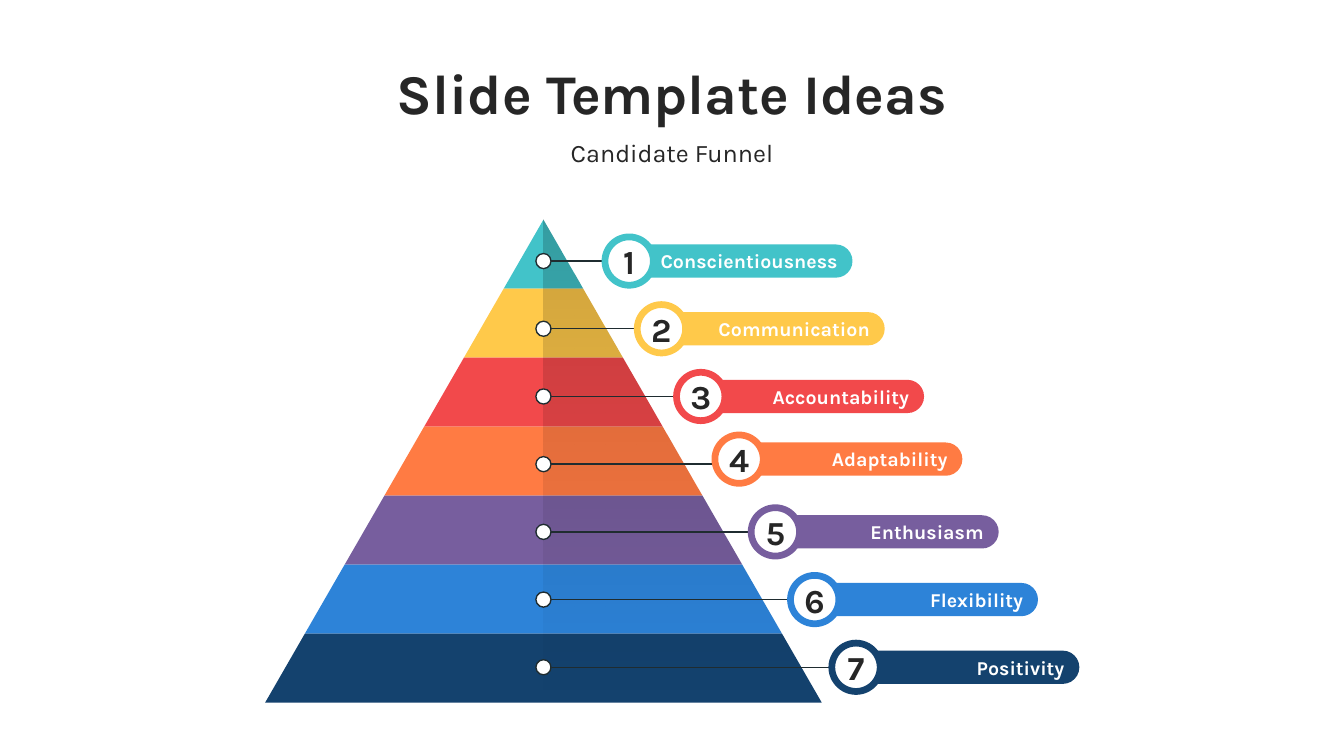
from dataclasses import dataclass

from lxml import etree
from pptx import Presentation
from pptx import util as u
from pptx.dml.color import RGBColor
from pptx.enum import shapes, text
from pptx.oxml import ns

TITLE = "Slide Template Ideas"
SUBTITLE = "Candidate Funnel"
# label, colour, centre of the number badge across the slide
LEVELS = [
    ("Conscientiousness", "42C3C9", 6.24),
    ("Communication", "FFC94A", 6.56),
    ("Accountability", "F2494B", 6.95),
    ("Adaptability", "FF7B43", 7.33),
    ("Enthusiasm", "775E9E", 7.69),
    ("Flexibility", "2D83D8", 8.08),
    ("Positivity", "14426E", 8.49),
]
BADGE_SHIFT = {"Adaptability": -0.05}


@dataclass(frozen=True)
class Theme:
    font: str = "Karla"
    ink: str = "262626"
    line: str = "1F2C30"
    white: str = "FFFFFF"
    shade: str = "000000"
    title_size: float = 40
    subtitle_size: float = 18
    number_size: float = 24
    label_size: float = 14
    thin: float = 0.97
    ring: float = 4.83


theme = Theme()
WIDTH, HEIGHT = 13.33, 7.5
AXIS, APEX, BASE, HALF_BASE = 5.39, 2.18, 6.97, 2.76
FIRST_ROW, LAST_ROW = 2.59, 6.62
BAND = (BASE - APEX) / len(LEVELS)
ROW = (LAST_ROW - FIRST_ROW) / (len(LEVELS) - 1)
DOT, BADGE = 0.15, 0.48
PILL_WIDTH, PILL_HEIGHT = 2.38, 0.33


def color(value):
    return RGBColor.from_string(value)


def write(shape, words, size, ink, align, bold=True, anchor=text.MSO_ANCHOR.MIDDLE):
    frame = shape.text_frame
    frame.text = words
    frame.word_wrap = True
    frame.auto_size = text.MSO_AUTO_SIZE.NONE
    frame.vertical_anchor = anchor
    paragraph = frame.paragraphs[0]
    paragraph.alignment = align
    paragraph.space_before = u.Pt(0)
    font = paragraph.runs[0].font
    font.name, font.size, font.bold = theme.font, u.Pt(size), bold
    font.color.rgb = color(ink)


def set_margins(frame, right=0):
    frame.margin_left = frame.margin_top = frame.margin_bottom = 0
    frame.margin_right = u.Inches(right)


def place(shape, left, top, width, height):
    shape.left, shape.top = u.Inches(left), u.Inches(top)
    shape.width, shape.height = u.Inches(width), u.Inches(height)


def add_centred(slide, kind, x, y, width, height, fill, line=None, weight=0):
    """Add a preset shape around the point x, y."""
    shape = slide.shapes.add_shape(
        kind, *map(u.Inches, (x - width / 2, y - height / 2, width, height)))
    shape.shadow.inherit = False
    shape.fill.solid()
    shape.fill.fore_color.rgb = color(fill)
    if line:
        shape.line.color.rgb = color(line)
        shape.line.width = u.Pt(weight)
    else:
        shape.line.fill.background()
    return shape


def add_polygon(slide, points):
    start, *others = [(u.Inches(x), u.Inches(y)) for x, y in points]
    builder = slide.shapes.build_freeform(*start, scale=1.0)
    builder.add_line_segments(others, close=True)
    shape = builder.convert_to_shape()
    shape.shadow.inherit = False
    shape.line.fill.background()
    return shape


def add_band(slide, index, fill):
    top, bottom = APEX + index * BAND, APEX + (index + 1) * BAND
    upper, lower = (HALF_BASE * step / len(LEVELS) for step in (index, index + 1))
    band = add_polygon(slide, [(AXIS - upper, top), (AXIS + upper, top),
                               (AXIS + lower, bottom), (AXIS - lower, bottom)])
    band.fill.solid()
    band.fill.fore_color.rgb = color(fill)


def add_shade(slide):
    """Darken the right half of the pyramid, fading out towards the base."""
    shade = add_polygon(slide, [(AXIS, APEX), (AXIS + HALF_BASE, BASE), (AXIS, BASE)])
    shade.fill.gradient()
    shade.fill.gradient_angle = 90
    for stop in shade.fill.gradient_stops:
        stop.color.rgb = color(theme.shade)
    stops = shade._element.spPr.iter(ns.qn("a:srgbClr"))
    for stop_color, opacity in zip(stops, (0, 20)):
        etree.SubElement(stop_color, ns.qn("a:alpha"), val=str(opacity * 1000))


def add_level(slide, index, label, fill, badge_x):
    y = FIRST_ROW + index * ROW
    badge_y = y + BADGE_SHIFT.get(label, 0)
    preset = shapes.MSO_SHAPE

    leader = slide.shapes.add_connector(
        shapes.MSO_CONNECTOR.STRAIGHT, *map(u.Inches, (AXIS, y, badge_x, y)))
    leader.line.color.rgb = color(theme.line)
    leader.line.width = u.Pt(theme.thin)
    etree.SubElement(leader._element.spPr, ns.qn("a:effectLst"))
    add_centred(slide, preset.OVAL, AXIS, y, DOT, DOT, theme.white, theme.line, theme.thin)

    pill_x = badge_x + (PILL_WIDTH - PILL_HEIGHT) / 2
    pill = add_centred(slide, preset.ROUNDED_RECTANGLE, pill_x, badge_y,
                       PILL_WIDTH, PILL_HEIGHT, fill)
    pill.adjustments[0] = 0.5
    write(pill, label, theme.label_size, theme.white, text.PP_ALIGN.RIGHT)
    set_margins(pill.text_frame, right=0.1)

    badge = add_centred(slide, preset.OVAL, badge_x, badge_y, BADGE, BADGE,
                        theme.white, fill, theme.ring)
    write(badge, str(index + 1), theme.number_size, theme.ink, text.PP_ALIGN.CENTER)
    set_margins(badge.text_frame)


def main():
    presentation = Presentation()
    presentation.slide_width = u.Inches(WIDTH)
    presentation.slide_height = u.Inches(HEIGHT)
    slide = presentation.slides.add_slide(presentation.slide_layouts[0])

    title, subtitle = slide.placeholders
    place(title, 0, 0.53, WIDTH, 0.77)
    place(subtitle, 0, 1.31, WIDTH, 0.4)
    centre, top = text.PP_ALIGN.CENTER, text.MSO_ANCHOR.TOP
    write(title, TITLE, theme.title_size, theme.ink, centre, anchor=top)
    write(subtitle, SUBTITLE, theme.subtitle_size, theme.ink, centre, bold=False, anchor=top)

    for index, (_, fill, _) in enumerate(LEVELS):
        add_band(slide, index, fill)
    add_shade(slide)
    for index, level in enumerate(LEVELS):
        add_level(slide, index, *level)

    presentation.save("out.pptx")


if __name__ == "__main__":
    main()
